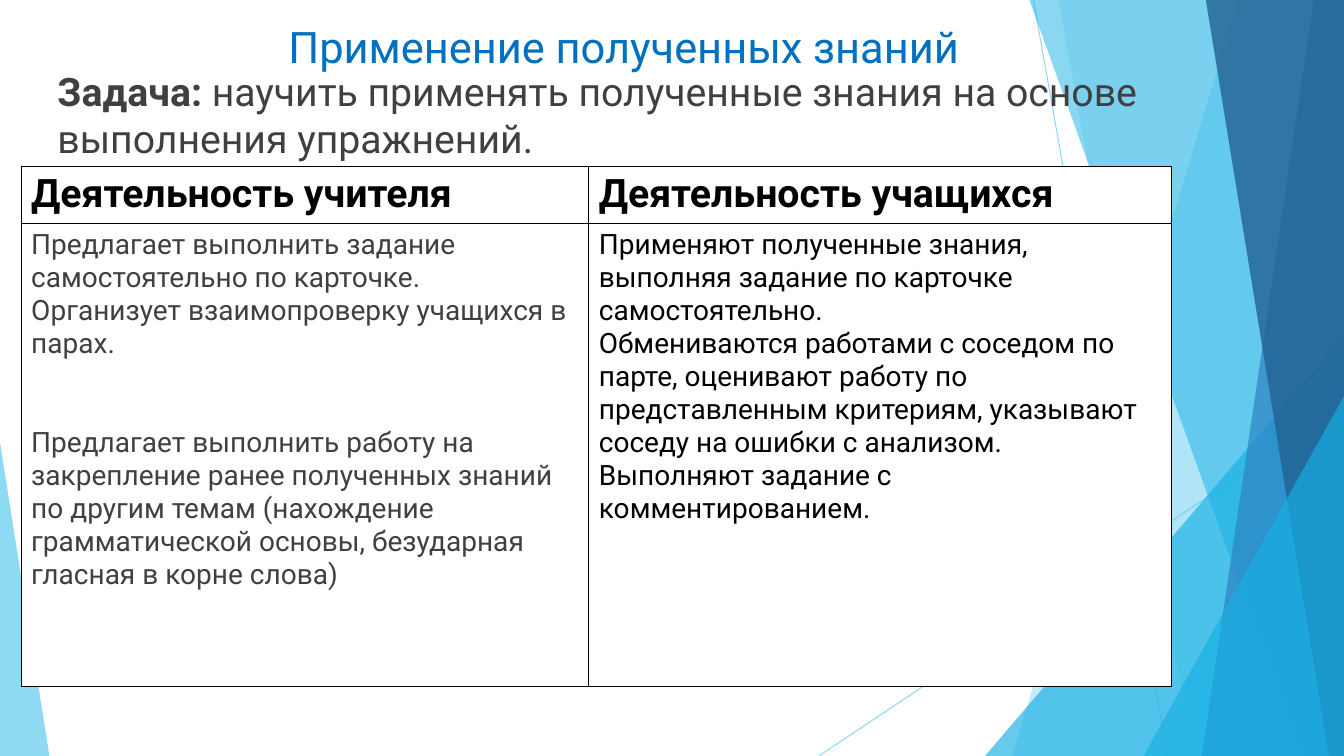
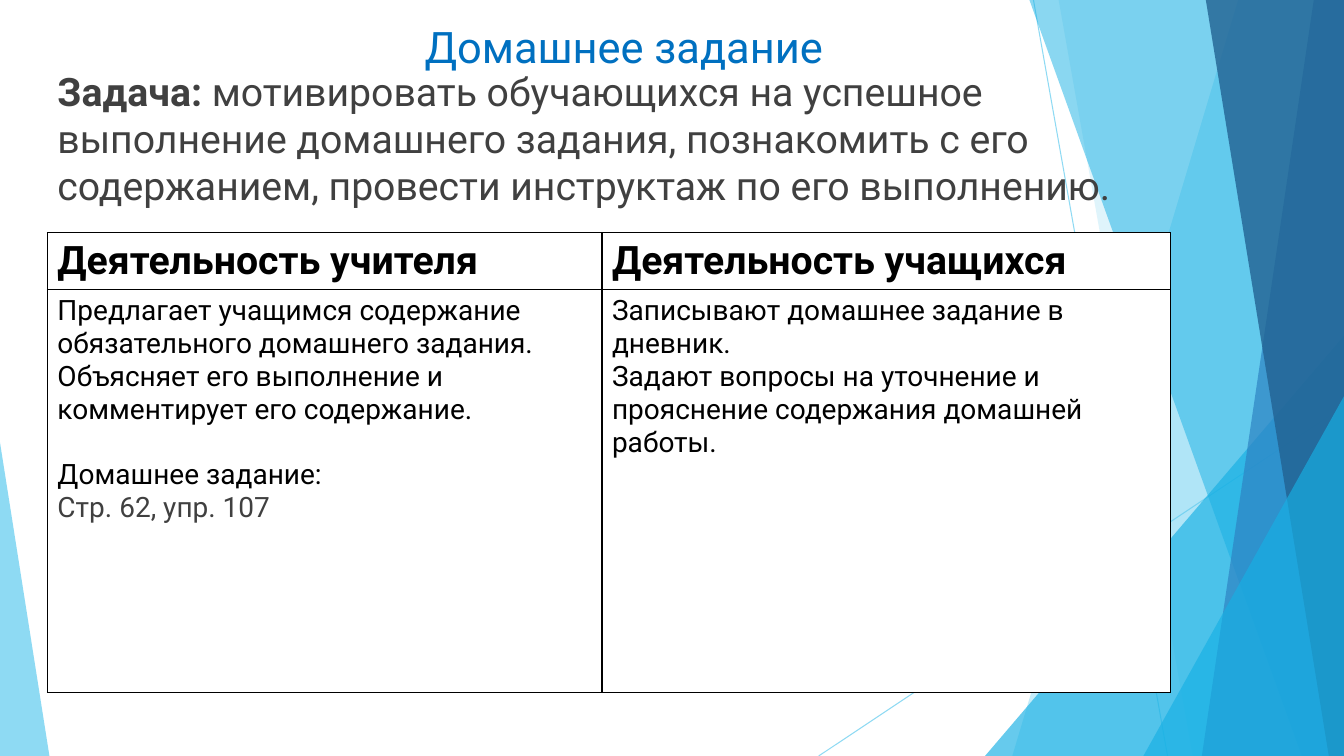
from lxml import etree
from pptx import Presentation
from pptx import util as u
from pptx.dml.color import RGBColor
from pptx.enum import shapes, text
from pptx.oxml import ns

FONT = "Roboto"
COLORS = {
    "title": "0070C0", "body": "404040", "black": "000000", "white": "FFFFFF",
    "sky": "5FCBEF", "cyan": "17B0E4", "blue": "2E83C3", "navy": "226292",
}
WIDTH, HEIGHT = 13.33, 7.5
TITLE_BOX = (0.82, 0.15, 10.73, 0.7)
BODY_BOX = (0.47, 0.62, 11.14, 5.95)
LINE_GAP = 23.5

RAYS = [((10.25, 0), (11.58, HEIGHT)), ((WIDTH, 4.03), (8.12, HEIGHT))]
FACETS = [
    ("band", 12.28, 10.04, "sky", 36),
    ("band", 10.5, 11.83, "sky", 20),
    ("triangle", (9.77, 3.33, 3.56, 4.17), 1, "cyan", 66),
    ("band", 10.21, 12.91, "cyan", 50),
    ("band", 13.03, 11.92, "blue", 70),
    ("band", 11.96, 13.18, "navy", 80),
    ("triangle", (11.34, 3.93, 1.99, 3.57), 1, "cyan", 66),
    ("triangle", (0, 4.39, 0.49, 3.11), 0, "sky", 70),
]

HEADERS = ("Деятельность учителя", "Деятельность учащихся")
TASK_LABEL = "Задача: "
LESSON_STAGES = [
    {
        "title": "Применение полученных знаний",
        "task": "научить применять полученные знания на основе выполнения упражнений.",
        "corner": (0.21, 1.65),
        "columns": (5.63, 5.78),
        "rows": (0.57, 4.59),
        "cells": [
            [
                ("Предлагает выполнить задание самостоятельно по карточке.", "body", 0),
                ("Организует взаимопроверку учащихся в парах.", "body", 0),
                ("Предлагает выполнить работу на закрепление ранее полученных знаний "
                 "по другим темам (нахождение грамматической основы, безударная "
                 "гласная в корне слова)", "body", 2),
            ],
            [
                ("Применяют полученные знания, выполняя задание по карточке "
                 "самостоятельно.", "black", 0),
                ("Обмениваются работами с соседом по парте, оценивают работу по "
                 "представленным критериям, указывают соседу на ошибки с анализом.",
                 "black", 0),
                ("Выполняют задание с комментированием.", "black", 0),
            ],
        ],
    },
    {
        "title": "Домашнее задание",
        "task": "мотивировать обучающихся на успешное выполнение домашнего задания, "
                "познакомить с его содержанием, провести инструктаж по его выполнению.",
        "corner": (0.47, 2.31),
        "columns": (5.5, 5.64),
        "rows": (0.56, 4.0),
        "cells": [
            [
                ("Предлагает учащимся содержание обязательного домашнего задания. "
                 "Объясняет его выполнение и комментирует его содержание.", "black", 0),
                ("Домашнее задание:", "black", 1),
                ("Стр. 62, упр. 107", "body", 0),
            ],
            [
                ("Записывают домашнее задание в дневник.", "black", 0),
                ("Задают вопросы на уточнение и прояснение содержания домашней "
                 "работы.", "black", 0),
            ],
        ],
    },
]


def inches(values):
    return [u.Inches(value) for value in values]


def add_text(para, words, size=20, color="black", bold=False):
    span = para.add_run()
    span.text = words
    span.font.name = FONT
    span.font.size = u.Pt(size)
    span.font.bold = bold
    span.font.color.rgb = RGBColor.from_string(COLORS[color])


def paint(fill, color, opacity=100):
    fill.solid()
    fill.fore_color.rgb = RGBColor.from_string(COLORS[color])
    if opacity < 100:
        tint = fill._xPr.find(".//" + ns.qn("a:srgbClr"))
        etree.SubElement(tint, ns.qn("a:alpha"), val=str(opacity * 1000))


def add_ray(page, start, end):
    ray = page.shapes.add_connector(shapes.MSO_CONNECTOR.STRAIGHT, *inches(start + end))
    ray.line.width = u.Pt(0.75)
    paint(ray.line.fill, "sky", 70)
    etree.SubElement(ray.element.spPr, ns.qn("a:effectLst"))
    return ray


def add_facet(page, kind, place, slant, color, opacity):
    if kind == "band":
        outline = page.shapes.build_freeform(u.Inches(place), 0)
        corners = [(WIDTH, 0), (WIDTH, HEIGHT), (slant, HEIGHT)]
        outline.add_line_segments([inches(corner) for corner in corners], close=True)
        facet = outline.convert_to_shape()
    else:
        facet = page.shapes.add_shape(shapes.MSO_SHAPE.ISOSCELES_TRIANGLE, *inches(place))
        facet.adjustments[0] = slant
    facet.shadow.inherit = False
    facet.line.fill.background()
    paint(facet.fill, color, opacity)
    return facet


def decorate(layout, page):
    for holder in list(layout.placeholders):
        if holder.placeholder_format.idx >= 10:
            layout.shapes.element.remove(holder.element)
    parts = [add_ray(page, *ray) for ray in RAYS]
    parts += [add_facet(page, *facet) for facet in FACETS]
    for part in parts:
        layout.shapes.element.append(part.element)


def place_holder(holder, box, alignment):
    holder.left, holder.top, holder.width, holder.height = inches(box)
    frame = holder.text_frame
    frame.word_wrap = True
    frame.auto_size = text.MSO_AUTO_SIZE.NONE
    frame.vertical_anchor = text.MSO_ANCHOR.TOP
    para = frame.paragraphs[0]
    para.space_before = u.Pt(0)
    para.alignment = alignment
    return para


def add_heading(page, stage):
    para = place_holder(page.shapes.title, TITLE_BOX, text.PP_ALIGN.CENTER)
    add_text(para, stage["title"], size=31, color="title")

    para = place_holder(page.placeholders[1], BODY_BOX, text.PP_ALIGN.LEFT)
    props = para._p.get_or_add_pPr()
    props.set("marL", "0")
    props.set("indent", "0")
    etree.SubElement(props, ns.qn("a:buNone"))
    add_text(para, TASK_LABEL, size=28, color="body", bold=True)
    add_text(para, stage["task"], size=28, color="body")


def frame_cell(cell):
    paint(cell.fill, "white")
    props = cell._tc.get_or_add_tcPr()
    for index, side in enumerate(("lnL", "lnR", "lnT", "lnB")):
        border = etree.Element(ns.qn("a:" + side), w=str(u.Pt(1)))
        fill = etree.SubElement(border, ns.qn("a:solidFill"))
        etree.SubElement(fill, ns.qn("a:srgbClr"), val=COLORS["black"])
        props.insert(index, border)


def add_activity_table(page, stage):
    size = (sum(stage["columns"]), sum(stage["rows"]))
    table = page.shapes.add_table(2, 2, *inches(stage["corner"] + size)).table
    table.horz_banding = False
    for row, height in zip(table.rows, stage["rows"]):
        row.height = u.Inches(height)
    for index, width in enumerate(stage["columns"]):
        table.columns[index].width = u.Inches(width)
        header, content = table.cell(0, index), table.cell(1, index)
        frame_cell(header)
        frame_cell(content)
        add_text(header.text_frame.paragraphs[0], HEADERS[index], size=28, bold=True)
        for number, (words, color, gap) in enumerate(stage["cells"][index]):
            frame = content.text_frame
            para = frame.add_paragraph() if number else frame.paragraphs[0]
            para.space_before = u.Pt(gap * LINE_GAP)
            add_text(para, words, color=color)


def main():
    deck = Presentation()
    deck.slide_width, deck.slide_height = inches((WIDTH, HEIGHT))
    layout = deck.slide_layouts[1]
    pages = [deck.slides.add_slide(layout) for stage in LESSON_STAGES]
    decorate(layout, pages[0])
    for page, stage in zip(pages, LESSON_STAGES):
        add_heading(page, stage)
        add_activity_table(page, stage)
    deck.save("out.pptx")


if __name__ == "__main__":
    main()
